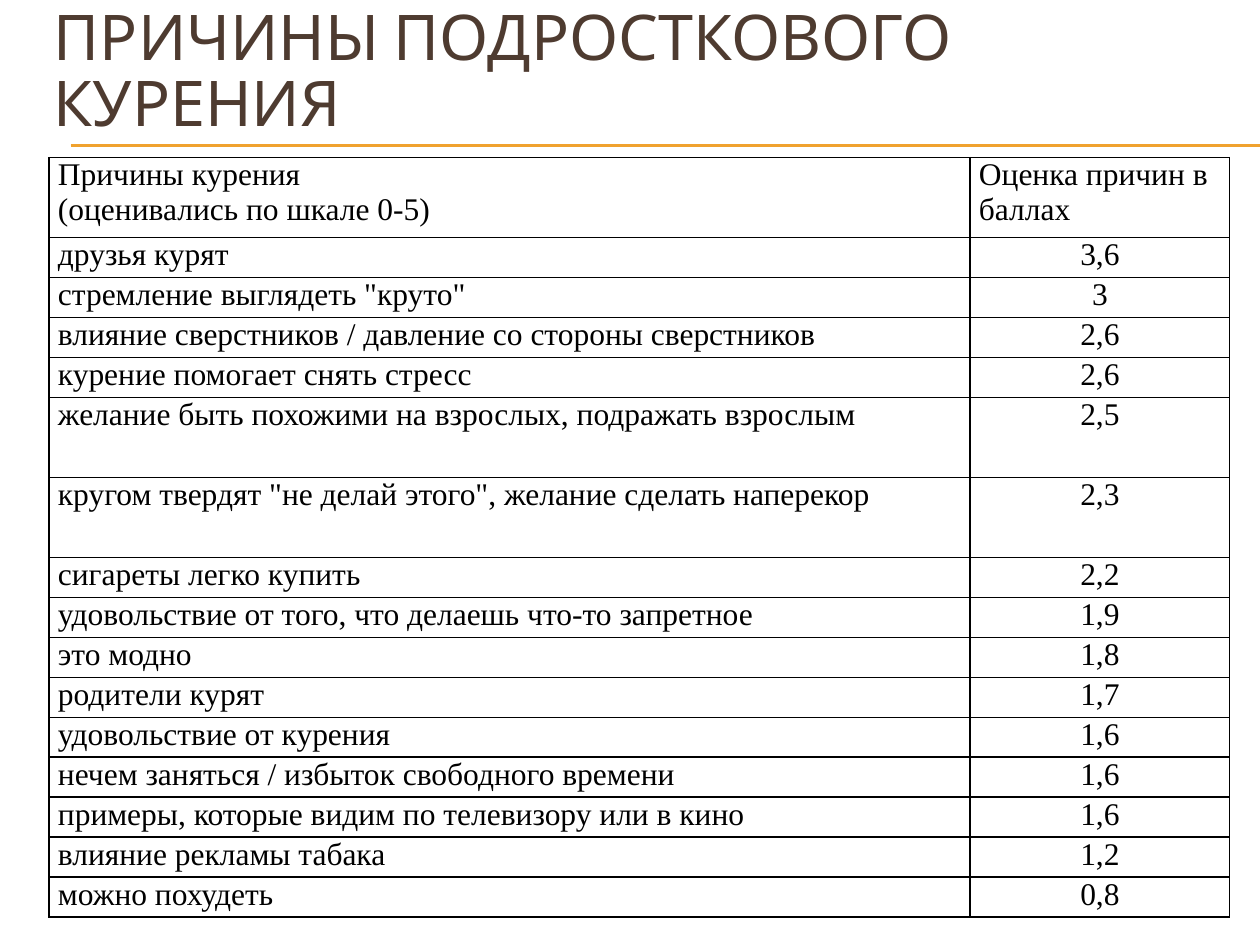
from lxml import etree
from pptx import Presentation
from pptx.dml.color import RGBColor
from pptx.enum.shapes import MSO_CONNECTOR
from pptx.enum.text import MSO_ANCHOR, PP_ALIGN
from pptx.oxml import parse_xml
from pptx.oxml.ns import nsdecls, qn
from pptx.util import Inches, Pt

STRAIGHT = MSO_CONNECTOR.STRAIGHT
MIDDLE = MSO_ANCHOR.MIDDLE
LEFT = PP_ALIGN.LEFT
CENTER = PP_ALIGN.CENTER

BROWN = RGBColor(0x4E, 0x3B, 0x30)
AMBER = RGBColor(0xF0, 0xA2, 0x2E)
BLACK = RGBColor(0, 0, 0)

TITLE_FONT = {"name": "Karla", "size": Pt(36)}
TABLE_FONT = {"name": "Times New Roman", "size": Pt(18)}
CELL_MARGINS = {
    "margin_left": Inches(0.07),
    "margin_right": Inches(0.07),
    "margin_top": 0,
    "margin_bottom": 0,
}
COLUMN_WIDTHS = (7.31, 2.06)
ROW_HEIGHT = 0.3175
TALL_ROWS = (0, 5, 6)

HEADER = ("Причины курения\n(оценивались по шкале 0-5)", "Оценка причин в баллах")
REASONS = [
    ("друзья курят", "3,6"),
    ('стремление выглядеть "круто"', "3"),
    ("влияние сверстников / давление со стороны сверстников", "2,6"),
    ("курение помогает снять стресс", "2,6"),
    ("желание быть похожими на взрослых, подражать взрослым", "2,5"),
    ('кругом твердят "не делай этого", желание сделать наперекор', "2,3"),
    ("сигареты легко купить", "2,2"),
    ("удовольствие от того, что делаешь что-то запретное", "1,9"),
    ("это модно", "1,8"),
    ("родители курят", "1,7"),
    ("удовольствие от курения", "1,6"),
    ("нечем заняться / избыток свободного времени", "1,6"),
    ("примеры, которые видим по телевизору или в кино", "1,6"),
    ("влияние рекламы табака", "1,2"),
    ("можно похудеть", "0,8"),
]


def apply_format(target, values):
    for attribute, value in values.items():
        setattr(target, attribute, value)


class SlideBuilder:
    def __init__(self, slide):
        self.slide = slide

    def fill_text(self, frame, text, font, color, align=LEFT):
        frame.text = text
        for paragraph in frame.paragraphs:
            paragraph.alignment = align
            apply_format(paragraph.font, font)
            paragraph.font.color.rgb = color

    def rule(self, y):
        rule = self.slide.shapes.add_connector(
            STRAIGHT, Inches(0.56), Inches(y), Inches(10), Inches(y)
        )
        rule.line.color.rgb = AMBER
        rule.line.width = Pt(0.75)
        etree.SubElement(rule._element.spPr, qn("a:effectLst"))

    def title(self, text):
        heading = self.slide.shapes.add_textbox(
            Inches(0.33), 0, Inches(9.5), Inches(1.17)
        )
        frame = heading.text_frame
        apply_format(frame, {"word_wrap": True, "vertical_anchor": MIDDLE})
        self.fill_text(frame, text, TITLE_FONT, BROWN)
        frame.paragraphs[0].line_spacing = 0.87

    def borders(self, cell):
        properties = cell._tc.get_or_add_tcPr()
        for position, side in enumerate(("lnL", "lnR", "lnT", "lnB")):
            border = parse_xml(
                f'<a:{side} {nsdecls("a")} w="{Pt(1)}"><a:solidFill>'
                f'<a:srgbClr val="{BLACK}"/></a:solidFill></a:{side}>'
            )
            properties.insert(position, border)

    def table(self, rows):
        heights = [
            ROW_HEIGHT * (2 if index in TALL_ROWS else 1) for index in range(len(rows))
        ]
        table = self.slide.shapes.add_table(
            len(rows), len(COLUMN_WIDTHS), Inches(0.39), Inches(1.25),
            Inches(sum(COLUMN_WIDTHS)), Inches(sum(heights)),
        ).table
        apply_format(table, {"first_row": False, "horz_banding": False})
        for column, width in zip(table.columns, COLUMN_WIDTHS):
            column.width = Inches(width)
        for row_index, (values, height) in enumerate(zip(rows, heights)):
            table.rows[row_index].height = Inches(height)
            for column_index, value in enumerate(values):
                cell = table.cell(row_index, column_index)
                apply_format(cell, CELL_MARGINS)
                cell.fill.background()
                self.borders(cell)
                align = CENTER if row_index and column_index else LEFT
                self.fill_text(cell.text_frame, value, TABLE_FONT, BLACK, align)


def main():
    presentation = Presentation()
    presentation.slide_width = Inches(10)
    presentation.slide_height = Inches(7.5)
    builder = SlideBuilder(
        presentation.slides.add_slide(presentation.slide_layouts[6])
    )
    for y in (1.15, 1.16):
        builder.rule(y)
    builder.title("ПРИЧИНЫ ПОДРОСТКОВОГО КУРЕНИЯ")
    builder.table([HEADER, *REASONS])
    presentation.save("out.pptx")


if __name__ == "__main__":
    main()
